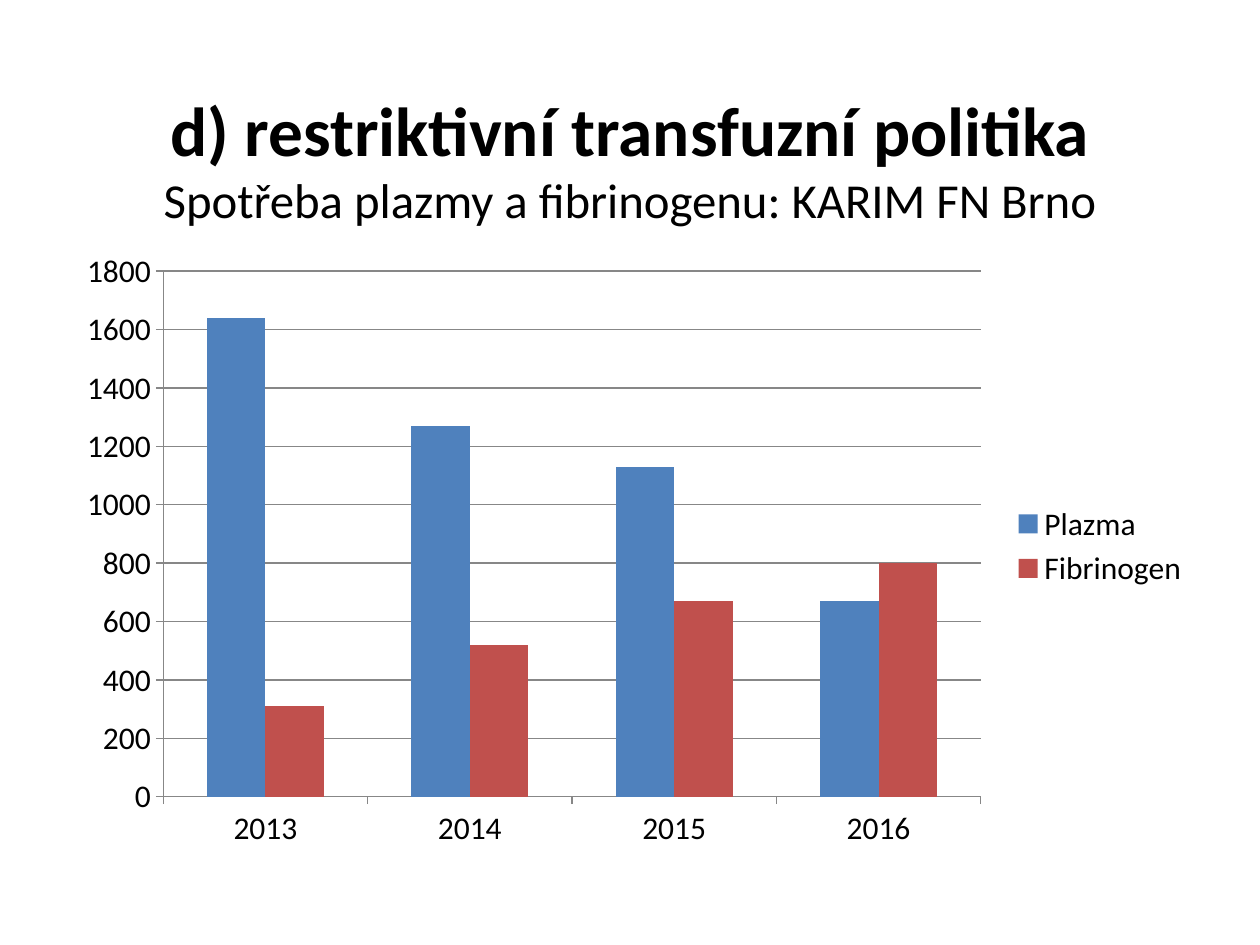
from pptx import Presentation
from pptx.chart.data import CategoryChartData
from pptx.dml.color import RGBColor
from pptx.enum.chart import XL_CHART_TYPE, XL_LEGEND_POSITION, XL_TICK_MARK
from pptx.enum.text import MSO_ANCHOR, MSO_AUTO_SIZE, PP_ALIGN
from pptx.oxml import parse_xml
from pptx.oxml.ns import nsdecls
from pptx.util import Inches, Pt

HEADS = [
    ("d) restriktivní transfuzní politika", 39.6, True),
    ("Spotřeba plazmy a fibrinogenu: KARIM FN Brno", 27.9, False),
]
YEARS = ["2013", "2014", "2015", "2016"]
SERIES = {
    "Plazma": [1640, 1270, 1130, 670],
    "Fibrinogen": [310, 520, 670, 800],
}
COLORS = {"Plazma": "4F81BD", "Fibrinogen": "C0504D", "text": "000000", "line": "878787"}
PLOT = {"x": 0.084, "y": 0.059, "w": 0.721, "h": 0.843}
FONT = "Calibri"


def color(name):
    return RGBColor.from_string(COLORS[name])


def style(font, size):
    font.name = FONT
    font.size = Pt(size)
    font.color.rgb = color("text")


def add_title(slide):
    title = slide.shapes.title
    title.left, title.top, title.width, title.height = map(Inches, (0.5, 0.3, 9, 1.25))
    frame = title.text_frame
    frame.auto_size = MSO_AUTO_SIZE.NONE
    frame.word_wrap = True
    frame.vertical_anchor = MSO_ANCHOR.TOP
    frame.margin_top = Inches(0.39)
    para = frame.paragraphs[0]
    para.alignment = PP_ALIGN.CENTER
    for index, (text, size, bold) in enumerate(HEADS):
        if index:
            para.add_line_break()
        run = para.add_run()
        run.text = text
        style(run.font, size)
        run.font.bold = bold


def add_plot(slide):
    data = CategoryChartData()
    data.categories = YEARS
    for name, values in SERIES.items():
        data.add_series(name, values)
    box = map(Inches, (0.54, 1.86, 9, 4.95))
    chart = slide.shapes.add_chart(XL_CHART_TYPE.COLUMN_CLUSTERED, *box, data).chart
    style(chart.font, 18)
    chart.has_title = False
    chart.has_legend = True
    chart.legend.position = XL_LEGEND_POSITION.RIGHT
    chart.legend.include_in_layout = False

    plot = chart.plots[0]
    plot.gap_width = 150
    plot.overlap = 0
    plot.vary_by_categories = False
    for series in plot.series:
        series.format.fill.solid()
        series.format.fill.fore_color.rgb = color(series.name)

    ends = chart.value_axis
    ends.minimum_scale, ends.maximum_scale, ends.major_unit = 0, 1800, 200
    ends.has_major_gridlines = True
    for axis in (chart.category_axis, ends):
        axis.major_tick_mark = XL_TICK_MARK.OUTSIDE
        axis.minor_tick_mark = XL_TICK_MARK.NONE
    for part in (chart.category_axis, ends, ends.major_gridlines):
        part.format.line.color.rgb = color("line")
        part.format.line.width = Pt(0.75)

    modes = "".join(f'<c:{key}Mode val="edge"/>' for key in "xy")
    sizes = "".join(f'<c:{key} val="{value}"/>' for key, value in PLOT.items())
    layout = parse_xml(
        f'<c:layout {nsdecls("c")}><c:manualLayout><c:layoutTarget val="inner"/>'
        f"{modes}{sizes}</c:manualLayout></c:layout>"
    )
    area = chart.element.chart.plotArea
    for old in area.findall(layout.tag):
        area.remove(old)
    area.insert(0, layout)


def main():
    deck = Presentation()
    deck.slide_width, deck.slide_height = Inches(10), Inches(7.5)
    slide = deck.slides.add_slide(deck.slide_layouts[5])
    add_title(slide)
    add_plot(slide)
    deck.save("out.pptx")


if __name__ == "__main__":
    main()
